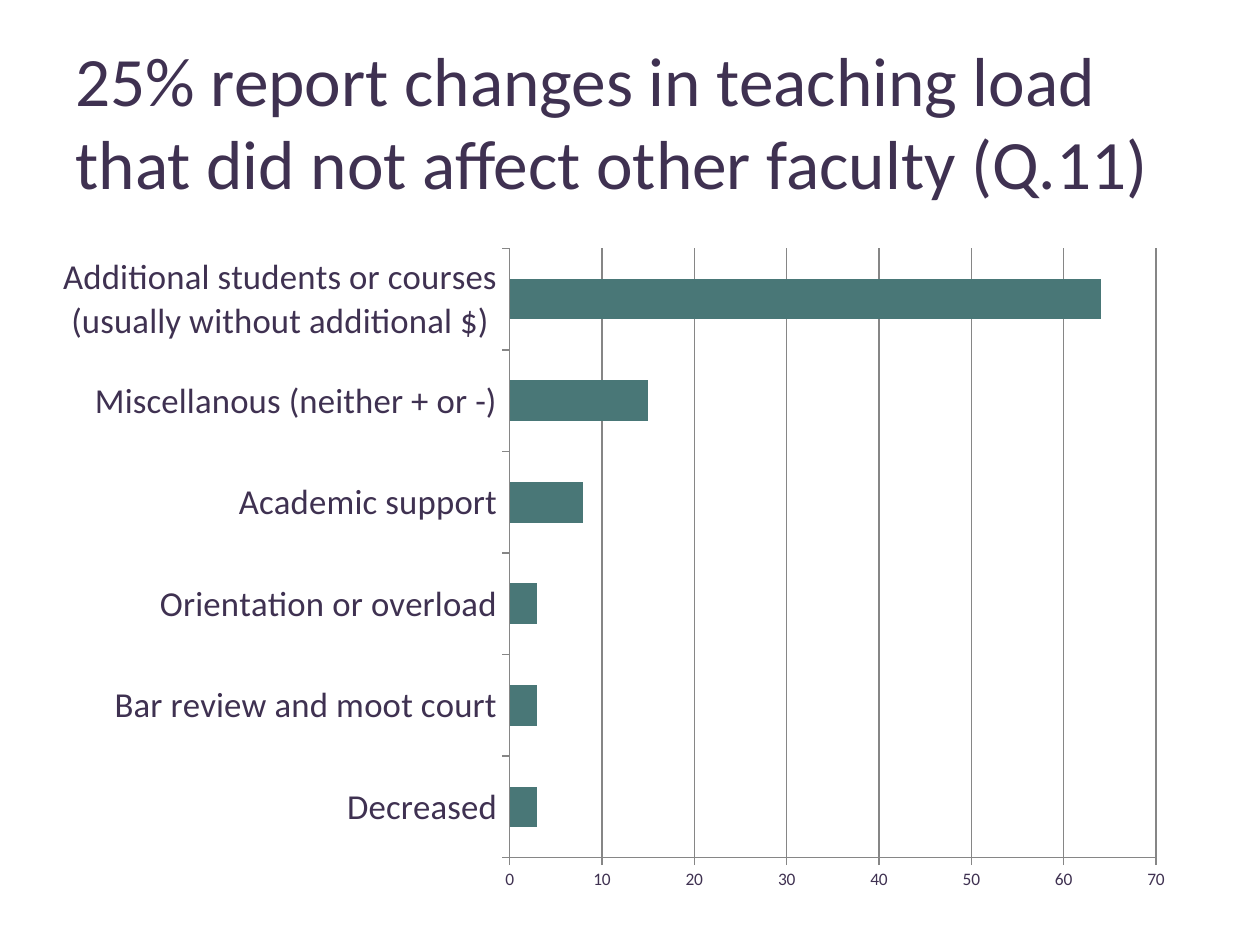
from pptx import Presentation
from pptx.chart.data import CategoryChartData
from pptx.dml.color import RGBColor
from pptx.enum.chart import XL_CHART_TYPE, XL_TICK_MARK
from pptx.enum.text import MSO_ANCHOR, PP_ALIGN
from pptx.util import Inches, Pt

TITLE = "25% report changes in teaching load that did not affect other faculty (Q.11)"
CHANGES = [  # bottom bar first
    ("Decreased", 3),
    ("Bar review and moot court", 3),
    ("Orientation or overload", 3),
    ("Academic support", 8),
    ("Miscellanous (neither + or -)", 15),
    ("Additional students or courses (usually without additional $)", 64),
]
FONT = "Calibri"
PLUM = RGBColor(0x3F, 0x31, 0x51)
TEAL = RGBColor(0x49, 0x77, 0x77)
GRAY = RGBColor(0x86, 0x86, 0x86)
TITLE_BOX = [Inches(n) for n in (0.5, 0.33, 9, 1.25)]
CHART_BOX = [Inches(n) for n in (0.5, 1.75, 8.92, 5.42)]


def style_font(font, size):
    font.name = FONT
    font.size = Pt(size)
    font.color.rgb = PLUM


def style_line(line):
    line.color.rgb = GRAY
    line.width = Pt(0.75)


prs = Presentation()
prs.slide_width, prs.slide_height = Inches(10), Inches(7.5)
s = prs.slides.add_slide(prs.slide_layouts[5])

title = s.shapes.title
title.left, title.top, title.width, title.height = TITLE_BOX
tf = title.text_frame
tf.text = TITLE
tf.word_wrap = True
tf.vertical_anchor = MSO_ANCHOR.MIDDLE
p = tf.paragraphs[0]
p.alignment = PP_ALIGN.LEFT
style_font(p.font, 39.6)

data = CategoryChartData()
data.categories = [name for name, _ in CHANGES]
data.add_series("Series 1", [value for _, value in CHANGES])
chart = s.shapes.add_chart(XL_CHART_TYPE.BAR_CLUSTERED, *CHART_BOX, data).chart
chart.has_legend = False
chart.has_title = False
style_font(chart.font, 10)

plot = chart.plots[0]
plot.gap_width = 150
plot.vary_by_categories = False
fill = plot.series[0].format.fill
fill.solid()
fill.fore_color.rgb = TEAL

for axis, size in ((chart.category_axis, 20), (chart.value_axis, 10)):
    axis.major_tick_mark = XL_TICK_MARK.OUTSIDE
    axis.minor_tick_mark = XL_TICK_MARK.NONE
    style_font(axis.tick_labels.font, size)
    style_line(axis.format.line)

chart.category_axis.has_major_gridlines = False
values = chart.value_axis
values.minimum_scale, values.maximum_scale, values.major_unit = 0, 70, 10
values.has_major_gridlines = True
style_line(values.major_gridlines.format.line)

prs.save("out.pptx")
